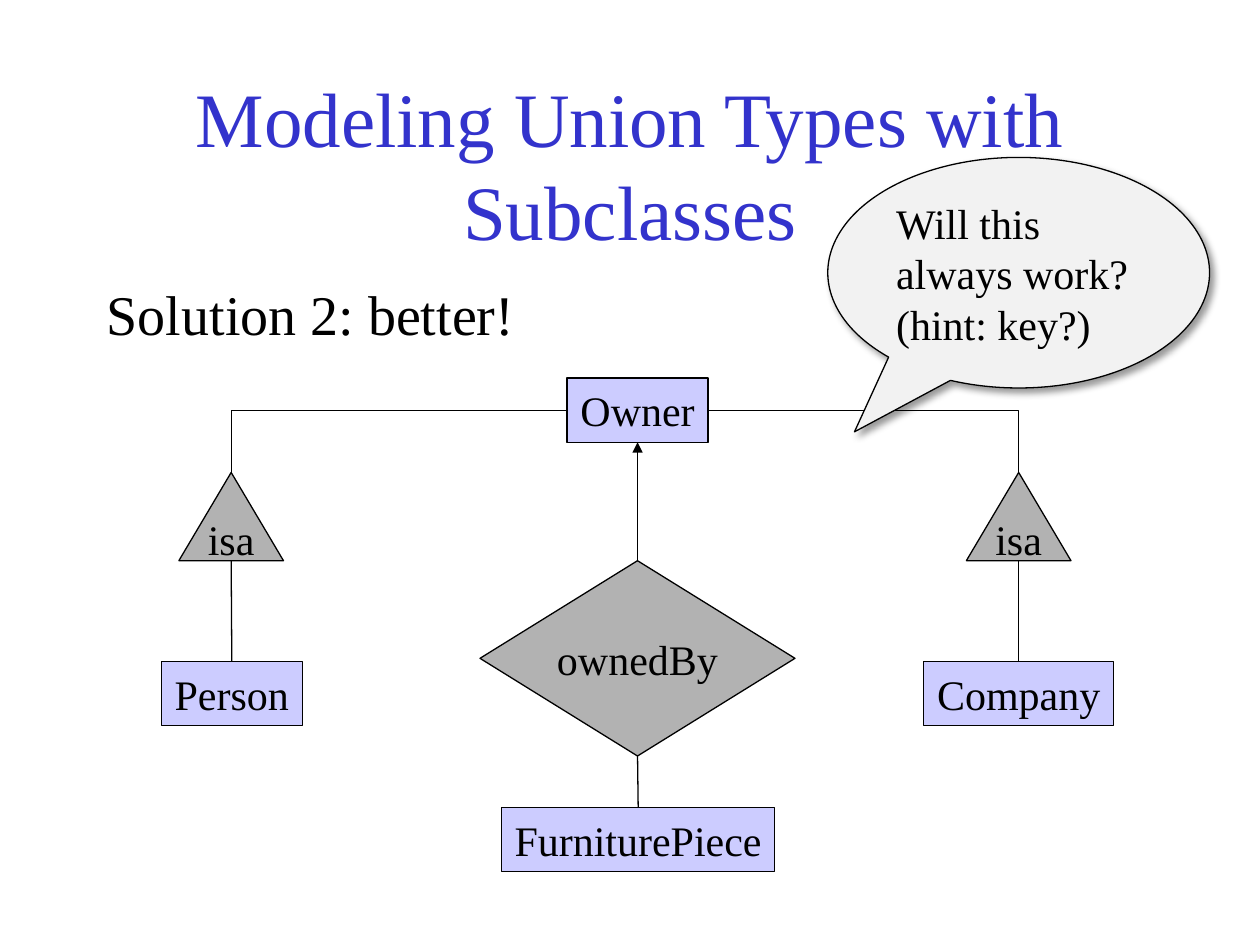
from dataclasses import dataclass

import pptx
import pptx.dml.color
import pptx.enum.shapes
import pptx.enum.text
import pptx.oxml
import pptx.oxml.ns
import pptx.util
from pptx.util import Inches

SHAPE = pptx.enum.shapes.MSO_SHAPE
CONNECTOR = pptx.enum.shapes.MSO_CONNECTOR
ALIGN = pptx.enum.text.PP_ALIGN
ANCHOR = pptx.enum.text.MSO_ANCHOR
AUTO_SIZE = pptx.enum.text.MSO_AUTO_SIZE
qn = pptx.oxml.ns.qn

FONT = "Times New Roman"
BLACK, BLUE = "000000", "3333CC"
LILAC, GREY, PALE = "CCCCFF", "B2B2B2", "F2F2F2"
LINE_WIDTH = 0.75
BOX_HEIGHT = 0.51


@dataclass
class Node:
    text: str
    kind: int
    left: float
    top: float
    width: float
    height: float = BOX_HEIGHT
    fill: str = LILAC


@dataclass
class Link:
    start: tuple[float, float]
    end: tuple[float, float]
    bent: bool = False
    arrow: bool = False


def rgb(value: str) -> pptx.dml.color.RGBColor:
    return pptx.dml.color.RGBColor.from_string(value)


def place(shape, left: float, top: float, width: float, height: float) -> None:
    box = {"left": left, "top": top, "width": width, "height": height}
    for name, length in box.items():
        setattr(shape, name, Inches(length))


def write(shape, text: str, size: float, color: str = BLACK,
          align=ALIGN.CENTER, **frame_format) -> None:
    frame = shape.text_frame
    frame.text = text
    for name, value in frame_format.items():
        setattr(frame, name, value)
    paragraph = frame.paragraphs[0]
    paragraph.alignment = align
    font = paragraph.runs[0].font
    font.color.rgb = rgb(color)
    for name, value in {"name": FONT, "size": pptx.util.Pt(size)}.items():
        setattr(font, name, value)


def outline(shape) -> None:
    shape.line.color.rgb = rgb(BLACK)
    shape.line.width = pptx.util.Pt(LINE_WIDTH)


def draw_node(slide, node: Node):
    box = (node.left, node.top, node.width, node.height)
    shape = slide.shapes.add_shape(node.kind, *map(Inches, box))
    shape.shadow.inherit = False
    shape.fill.solid()
    shape.fill.fore_color.rgb = rgb(node.fill)
    outline(shape)
    write(shape, node.text, 24, word_wrap=False, vertical_anchor=ANCHOR.MIDDLE)
    return shape


def draw_link(slide, link: Link) -> None:
    kind = CONNECTOR.ELBOW if link.bent else CONNECTOR.STRAIGHT
    connector = slide.shapes.add_connector(
        kind, *map(Inches, link.start + link.end))
    outline(connector)
    properties = connector.element.spPr
    if link.bent:
        # A single corner instead of the default two
        properties.find(qn("a:prstGeom")).set("prst", "bentConnector2")
    if link.arrow:
        line = properties.find(qn("a:ln"))
        line.append(line.makeelement(qn("a:tailEnd"), {"type": "triangle"}))
    properties.append(properties.makeelement(qn("a:effectLst"), {}))


def add_soft_shadow(shape) -> None:
    effects = shape.element.spPr.find(qn("a:effectLst"))
    effects.append(pptx.oxml.parse_xml(
        f'<a:outerShdw {pptx.oxml.ns.nsdecls("a")} blurRad="50800" '
        'dist="38100" dir="2700000" algn="tl" rotWithShape="0">'
        f'<a:srgbClr val="{BLACK}"><a:alpha val="40000"/></a:srgbClr>'
        '</a:outerShdw>'))


# Entity-relationship diagram
OWNER = Node("Owner", SHAPE.RECTANGLE, 4.5, 3, 1.12)
ISA_LEFT, ISA_RIGHT = (
    Node("isa", SHAPE.ISOSCELES_TRIANGLE, left, 3.75, 0.83, 0.7, GREY)
    for left in (1.42, 7.67))
PERSON = Node("Person", SHAPE.RECTANGLE, 1.28, 5.25, 1.12)
COMPANY = Node("Company", SHAPE.RECTANGLE, 7.33, 5.25, 1.51)
OWNED_BY = Node("ownedBy", SHAPE.DIAMOND, 3.81, 4.45, 2.5, 1.55, GREY)
FURNITURE = Node("FurniturePiece", SHAPE.RECTANGLE, 3.98, 6.41, 2.17)
NODES = [ISA_LEFT, FURNITURE, PERSON, COMPANY, OWNED_BY, OWNER, ISA_RIGHT]


def top_of(node: Node) -> tuple[float, float]:
    return node.left + node.width / 2, node.top


def bottom_of(node: Node) -> tuple[float, float]:
    return node.left + node.width / 2, node.top + node.height


OWNER_MIDDLE = OWNER.top + OWNER.height / 2
LINKS = [
    Link(top_of(PERSON), bottom_of(ISA_LEFT)),
    Link(top_of(COMPANY), bottom_of(ISA_RIGHT)),
    Link((OWNER.left, OWNER_MIDDLE), top_of(ISA_LEFT), bent=True),
    Link((OWNER.left + OWNER.width, OWNER_MIDDLE), top_of(ISA_RIGHT), bent=True),
    Link(top_of(OWNED_BY), bottom_of(OWNER), arrow=True),
    Link(top_of(FURNITURE), bottom_of(OWNED_BY)),
]


def main() -> None:
    deck = pptx.Presentation()
    deck.slide_width, deck.slide_height = Inches(10), Inches(7.5)
    slide = deck.slides.add_slide(deck.slide_layouts[5])

    # Title and subheading
    title = slide.shapes.title
    place(title, 0.75, 0.67, 8.5, 1.25)
    write(title, "Modeling Union Types with Subclasses", 44, BLUE,
          word_wrap=True, vertical_anchor=ANCHOR.MIDDLE,
          auto_size=AUTO_SIZE.NONE)
    solution = slide.shapes.add_textbox(
        *map(Inches, (0.75, 2.17, 8.5, 4.5)))
    write(solution, "Solution 2: better!", 32, align=ALIGN.LEFT, word_wrap=True)
    solution.text_frame.paragraphs[0].space_before = pptx.util.Pt(6)

    # Diagram
    for node in NODES:
        draw_node(slide, node)
    for link in LINKS:
        draw_link(slide, link)

    # Question bubble
    question = draw_node(slide, Node(
        "Will this always work? (hint: key?)", SHAPE.OVAL_CALLOUT,
        6.57, 1.25, 3.03, 1.83, PALE))
    question.adjustments[0], question.adjustments[1] = -0.43, 0.69
    question.text_frame.word_wrap = True
    question.text_frame.vertical_anchor = ANCHOR.TOP
    question.text_frame.paragraphs[0].alignment = ALIGN.LEFT
    add_soft_shadow(question)

    deck.save("out.pptx")


if __name__ == "__main__":
    main()
